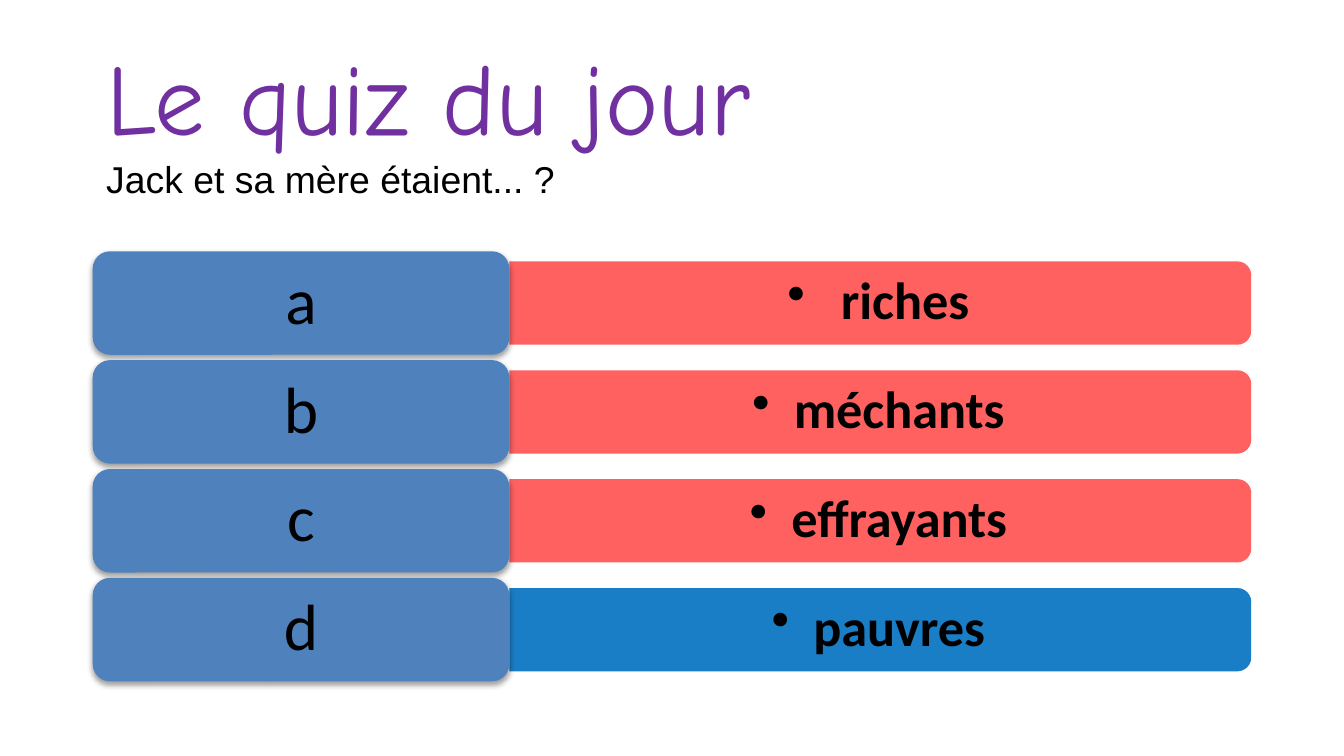
from dataclasses import dataclass

from lxml.etree import SubElement
from pptx import Presentation
from pptx.dml.color import RGBColor
from pptx.enum.shapes import MSO_SHAPE
from pptx.enum.text import MSO_ANCHOR, PP_ALIGN
from pptx.oxml import parse_xml
from pptx.oxml.ns import nsdecls, qn
from pptx.util import Inches, Pt


@dataclass(frozen=True)
class Theme:
    title: str = "7030A0"
    text: str = "000000"
    label: str = "4F81BD"
    wrong: str = "FF5050"
    right: str = "0070C0"
    title_font: str = "Comic Neue"
    question_font: str = "Arial"
    font: str = "Calibri"
    title_size: int = 54
    question_size: int = 20
    label_size: int = 35
    answer_size: int = 28


@dataclass(frozen=True)
class Answer:
    letter: str
    text: str
    correct: bool = False


THEME = Theme()
ANSWERS = [
    Answer("a", " riches"),
    Answer("b", "méchants"),
    Answer("c", "effrayants"),
    Answer("d", "pauvres", True),
]
SLIDE_W = Inches(10)
SLIDE_H = SLIDE_W * 9 // 16
LEFT, TOP, PITCH = 0.69, 1.87, 0.81
LABEL_W, LABEL_H = 3.1, 0.77
BAR_W, BAR_H = 5.52, 0.62
ANSWER_W, ANSWER_H = 5.49, 0.56


def apply(obj, values: dict) -> None:
    for name, value in values.items():
        setattr(obj, name, value)


def add_run(p, text: str, font: str, size: int, color: str, bold: bool = False) -> None:
    r = p.add_run()
    r.text = text
    apply(r.font, {"name": font, "size": Pt(size), "bold": bold})
    r.font.color.rgb = RGBColor.from_string(color)


def fill_shape(sp, color: str) -> None:
    sp.shadow.inherit = False
    sp.fill.solid()
    sp.fill.fore_color.rgb = RGBColor.from_string(color)
    sp.line.fill.background()


def center_text(sp, inset_x: float, inset_y: float):
    tf = sp.text_frame
    apply(tf, {
        "word_wrap": True,
        "vertical_anchor": MSO_ANCHOR.MIDDLE,
        "margin_left": Inches(inset_x),
        "margin_right": Inches(inset_x),
        "margin_top": Inches(inset_y),
        "margin_bottom": Inches(inset_y),
    })
    p = tf.paragraphs[0]
    apply(p, {"alignment": PP_ALIGN.CENTER, "line_spacing": 0.9})
    return p


def add_title(s, title: str, question: str) -> None:
    sp = s.shapes.title
    apply(sp, {"left": Inches(LEFT), "top": Inches(0.2),
               "width": Inches(8.62), "height": Inches(1.35)})
    tf = sp.text_frame
    tf.vertical_anchor = MSO_ANCHOR.MIDDLE
    p = tf.paragraphs[0]
    p.alignment = PP_ALIGN.LEFT
    add_run(p, title, THEME.title_font, THEME.title_size, THEME.title)
    p.add_line_break()
    add_run(p, question, THEME.question_font, THEME.question_size, THEME.text)


def add_bar(s, middle: float, color: str) -> None:
    center = LEFT + LABEL_W + BAR_W / 2
    sp = s.shapes.add_shape(
        MSO_SHAPE.ROUND_2_SAME_RECTANGLE,
        Inches(center - BAR_H / 2), Inches(middle - BAR_W / 2),
        Inches(BAR_H), Inches(BAR_W))
    sp.rotation = 90
    fill_shape(sp, color)
    clr = sp.fill._xPr.find(qn("a:solidFill"))[0]
    SubElement(clr, qn("a:alpha"), val="90000")


def add_answer(s, middle: float, text: str) -> None:
    sp = s.shapes.add_textbox(
        Inches(LEFT + LABEL_W), Inches(middle - ANSWER_H / 2),
        Inches(ANSWER_W), Inches(ANSWER_H))
    p = center_text(sp, 0.12, 0.06)
    p.level = 1
    pPr = p._p.get_or_add_pPr()
    pPr.set("marL", str(Inches(0.31)))
    pPr.set("indent", str(-Inches(0.31)))
    SubElement(pPr, qn("a:buChar"), char="••")
    add_run(p, text, THEME.font, THEME.answer_size, THEME.text, True)


def add_label(s, middle: float, letter: str) -> None:
    sp = s.shapes.add_shape(
        MSO_SHAPE.ROUNDED_RECTANGLE,
        Inches(LEFT), Inches(middle - LABEL_H / 2),
        Inches(LABEL_W), Inches(LABEL_H))
    fill_shape(sp, THEME.label)
    effects = sp._element.spPr.find(qn("a:effectLst"))
    effects.append(parse_xml(
        f'<a:outerShdw {nsdecls("a")} blurRad="{Pt(3.1)}" dist="{Pt(1.6)}" '
        'dir="5400000" rotWithShape="0"><a:srgbClr val="000000">'
        '<a:alpha val="38000"/></a:srgbClr></a:outerShdw>'))
    p = center_text(sp, 0.15, 0.07)
    add_run(p, letter, THEME.font, THEME.label_size, THEME.text)


def main() -> None:
    prs = Presentation()
    apply(prs, {"slide_width": SLIDE_W, "slide_height": SLIDE_H})
    s = prs.slides.add_slide(prs.slide_layouts[5])
    add_title(s, "Le quiz du jour", "Jack et sa mère étaient... ?")
    for i, answer in enumerate(ANSWERS):
        middle = TOP + LABEL_H / 2 + i * PITCH
        add_bar(s, middle, THEME.right if answer.correct else THEME.wrong)
        add_answer(s, middle, answer.text)
        add_label(s, middle, answer.letter)
    prs.save("out.pptx")


if __name__ == "__main__":
    main()
